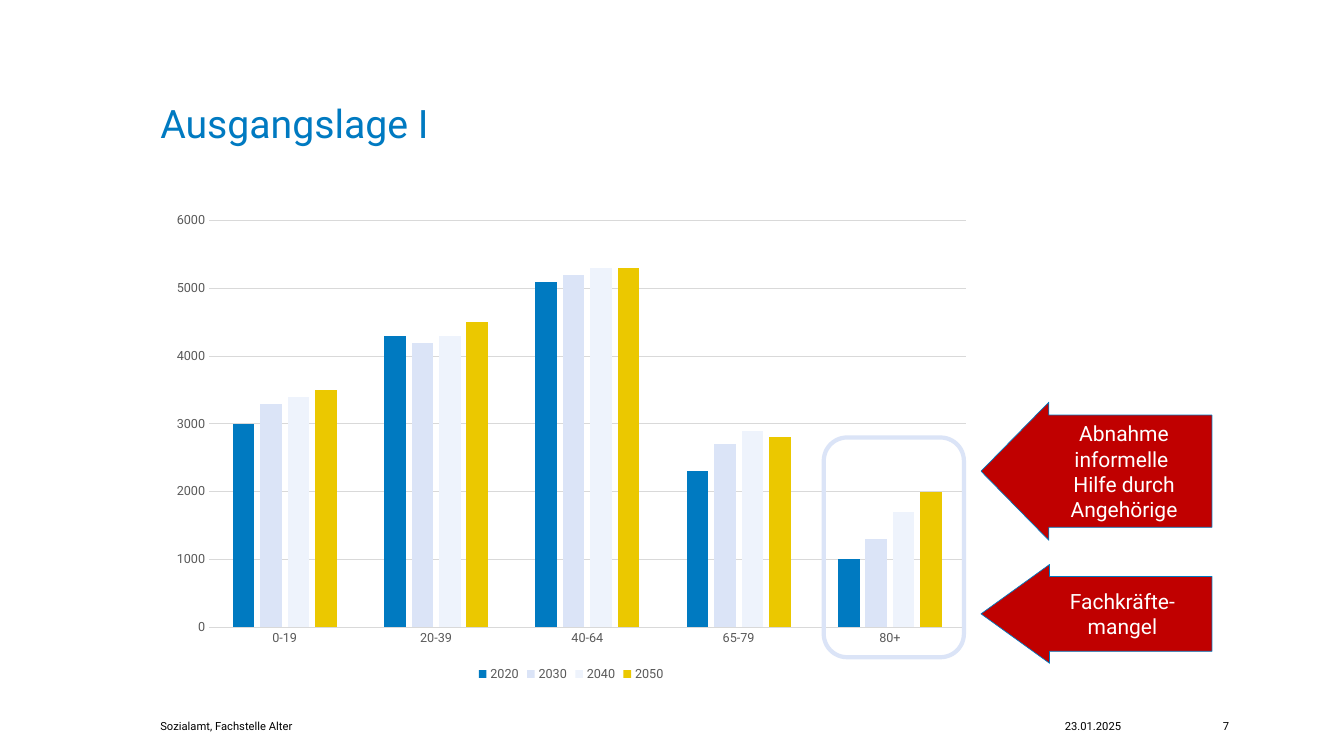
"""Build the slide on the starting point: age groups by year, with two warning arrows."""
from lxml import etree
from pptx import Presentation
from pptx import util as u
from pptx.chart.data import CategoryChartData
from pptx.dml.color import RGBColor
from pptx.enum import chart as ch, shapes, text

FONT = "Roboto"
BLUE, PALE, RED, GREY, RULE = "007AC1", "DBE4F7", "C00000", "595959", "D9D9D9"
LEFT, MID, RIGHT = text.PP_ALIGN.LEFT, text.PP_ALIGN.CENTER, text.PP_ALIGN.RIGHT

TEXTS = [
    ("Ausgangslage I", (1.59, 0.99, 9.64, 0.86), 28, BLUE, LEFT, 0),
    ("Sozialamt, Fachstelle Alter", (1.59, 7.09, 7.69, 0.26), 8, "000000", LEFT, 0),
    ("23.01.2025", (9.59, 7.09, 1.63, 0.26), 8, "000000", RIGHT, 0.1),
    ("7", (11.54, 7.09, 0.65, 0.26), 8, "000000", RIGHT, 0),
]
AGES = ["0-19", "20-39", "40-64", "65-79", "80+"]
YEARS = [
    ("2020", BLUE, [3000, 4300, 5100, 2300, 1000]),
    ("2030", PALE, [3300, 4200, 5200, 2700, 1300]),
    ("2040", "EEF3FC", [3400, 4300, 5300, 2900, 1700]),
    ("2050", "EBC800", [3500, 4500, 5300, 2800, 2000]),
]
CHART = (1.59, 2.02, 8.15, 4.78)
FRAME = (8.17, 4.34, 1.39, 2.18)
ARROWS = [
    ("Fachkräfte-mangel", (9.73, 5.6, 2.29, 0.98), (0.758, 0.694)),
    ("Abnahme informelle \vHilfe durch Angehörige", (9.73, 3.99, 2.29, 1.37), (0.813, 0.491)),
]


def paint(part, tone):
    if hasattr(part, "solid"):
        part.solid()
        part = part.fore_color
    part.rgb = RGBColor.from_string(tone)


def place(box):
    return [u.Inches(n) for n in box]


def style(obj, **form):
    for key, val in form.items():
        setattr(obj, key, val)


def face(font, size, tone):
    style(font, name=FONT, size=u.Pt(size), bold=False)
    paint(font.color, tone)


def write(frame, words, size, tone, align):
    frame.word_wrap = True
    par = frame.paragraphs[0]
    par.text = words
    par.alignment = align
    for run in par.runs:
        face(run.font, size, tone)
    return par


def stroke(line, tone, width):
    paint(line.fill, tone)
    line.width = u.Pt(width)


def add_shape(slide, kind, box, tone, width):
    shape = slide.shapes.add_shape(kind, *place(box))
    shape.shadow.inherit = False
    stroke(shape.line, tone, width)
    return shape


def add_chart(slide):
    data = CategoryChartData()
    data.categories = AGES
    for name, _, vals in YEARS:
        data.add_series(name, vals)
    kind = ch.XL_CHART_TYPE.COLUMN_CLUSTERED
    chart = slide.shapes.add_chart(kind, *place(CHART), data).chart
    face(chart.font, 10, "000000")
    style(chart, has_title=False, has_legend=True)
    style(chart.legend, position=ch.XL_LEGEND_POSITION.BOTTOM, include_in_layout=False)
    face(chart.legend.font, 9, GREY)

    plot = chart.plots[0]
    style(plot, gap_width=219, overlap=-27, vary_by_categories=False)
    for bar, (_, tone, _) in zip(plot.series, YEARS):
        paint(bar.format.fill, tone)

    cat, val = chart.category_axis, chart.value_axis
    for axis in (cat, val):
        style(axis, major_tick_mark=ch.XL_TICK_MARK.NONE, minor_tick_mark=ch.XL_TICK_MARK.NONE)
        face(axis.tick_labels.font, 9, GREY)
    style(val, minimum_scale=0, maximum_scale=6000, major_unit=1000, has_major_gridlines=True)
    val.format.line.fill.background()
    for line in (cat.format.line, val.major_gridlines.format.line):
        stroke(line, RULE, 0.75)


def main():
    deck = Presentation()
    style(deck, slide_width=u.Inches(13.33), slide_height=u.Inches(7.5))
    slide = deck.slides.add_slide(deck.slide_layouts[6])

    for words, box, size, tone, align, side in TEXTS:
        frame = slide.shapes.add_textbox(*place(box)).text_frame
        style(frame, margin_left=u.Inches(side), margin_right=u.Inches(side))
        par = write(frame, words, size, tone, align)
        if size == 28:
            par.line_spacing = 0.9

    add_chart(slide)
    frame = add_shape(slide, shapes.MSO_SHAPE.ROUNDED_RECTANGLE, FRAME, PALE, 3)
    frame.fill.background()
    for words, box, bends in ARROWS:
        arrow = add_shape(slide, shapes.MSO_SHAPE.LEFT_ARROW, box, BLUE, 0.5)
        paint(arrow.fill, RED)
        for i, bend in enumerate(bends):
            arrow.adjustments[i] = bend
        arrow.text_frame.vertical_anchor = text.MSO_ANCHOR.MIDDLE
        write(arrow.text_frame, words, 15, "FFFFFF", MID)

    deck.save("out.pptx")


if __name__ == "__main__":
    main()
